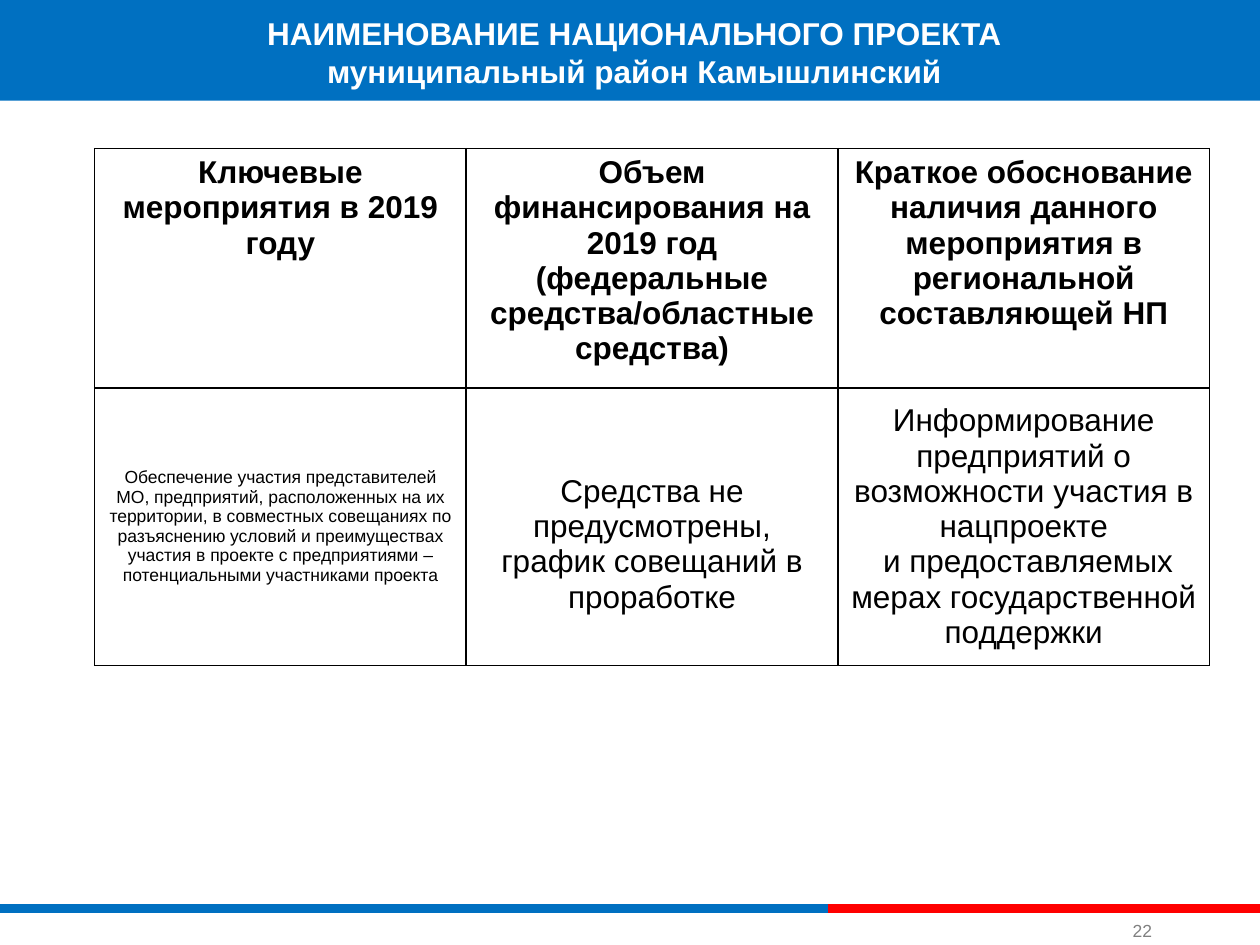
from lxml import etree
from pptx import Presentation
from pptx.dml.color import RGBColor
from pptx.enum.shapes import MSO_CONNECTOR, MSO_SHAPE
from pptx.enum.text import MSO_ANCHOR, PP_ALIGN
from pptx.oxml.ns import qn
from pptx.util import Inches, Pt

CENTER, LEFT = PP_ALIGN.CENTER, PP_ALIGN.LEFT
TOP, MIDDLE, BOTTOM = MSO_ANCHOR.TOP, MSO_ANCHOR.MIDDLE, MSO_ANCHOR.BOTTOM
RECTANGLE, STRAIGHT = MSO_SHAPE.RECTANGLE, MSO_CONNECTOR.STRAIGHT
TITLE_ONLY = 5

FONT = "Arial"
COLORS = {
    "blue": "0070C1",
    "red": "FF0000",
    "white": "FFFFFF",
    "black": "000000",
    "gray": "808080",
}

HEADINGS = [
    "Ключевые мероприятия в 2019 году",
    "Объем финансирования на 2019 год (федеральные средства/областные средства)",
    "Краткое обоснование наличия данного мероприятия в региональной составляющей НП",
]
# Text, size and top margin of each cell
MEASURES = [
    ("Обеспечение участия представителей МО, предприятий, расположенных на их "
     "территории, в совместных совещаниях по разъяснению условий и преимуществах "
     "участия в проекте с предприятиями – потенциальными участниками проекта", 10, 0.05),
    ("Средства не предусмотрены, график совещаний в проработке", 18, 0.33),
    ("Информирование предприятий о возможности участия в нацпроекте\n"
     " и предоставляемых мерах государственной поддержки", 18, 0.05),
]


class SlideBuilder:
    def __init__(self, slide):
        self.slide = slide

    def color(self, name):
        return RGBColor.from_string(COLORS[name])

    def format_text(self, frame, text, size, color, bold=False, align=CENTER):
        frame.text = text
        for paragraph in frame.paragraphs:
            paragraph.alignment = align
            paragraph.line_spacing = 1.0
            for run in paragraph.runs:
                run.font.name = FONT
                run.font.size = Pt(size)
                run.font.bold = bold
                run.font.color.rgb = self.color(color)

    def set_frame(self, frame, anchor):
        frame.word_wrap = False
        frame.vertical_anchor = anchor
        frame.margin_left = frame.margin_right = Inches(0.05)
        frame.margin_top = frame.margin_bottom = Inches(0.05)

    def banner(self, left, top, width, height):
        band = self.slide.shapes.add_shape(
            RECTANGLE, Inches(left), Inches(top), Inches(width), Inches(height))
        band.shadow.inherit = False
        band.fill.solid()
        band.fill.fore_color.rgb = self.color("blue")
        band.line.fill.background()
        # Send behind the title
        self.slide.shapes._spTree.insert(2, band._element)

    def title(self, text, left, top, width, height):
        title = self.slide.shapes.title
        title.left, title.top = Inches(left), Inches(top)
        title.width, title.height = Inches(width), Inches(height)
        self.set_frame(title.text_frame, MIDDLE)
        self.format_text(title.text_frame, text, 18, "white", bold=True)

    def line(self, start, end, y, color):
        rule = self.slide.shapes.add_connector(
            STRAIGHT, Inches(start), Inches(y), Inches(end), Inches(y))
        rule.line.color.rgb = self.color(color)
        rule.line.width = Pt(5)
        etree.SubElement(rule._element.spPr, qn("a:effectLst"))

    def label(self, text, left, top, width, height):
        box = self.slide.shapes.add_textbox(
            Inches(left), Inches(top), Inches(width), Inches(height))
        self.set_frame(box.text_frame, BOTTOM)
        # Wrapping holds the text at the left edge of the box
        box.text_frame.word_wrap = True
        self.format_text(box.text_frame, text, 10, "gray", align=LEFT)

    def table(self, left, top, column_width, row_heights):
        columns = len(HEADINGS)
        table = self.slide.shapes.add_table(
            len(row_heights), columns, Inches(left), Inches(top),
            Inches(column_width * columns), Inches(sum(row_heights))).table
        table.first_row = table.horz_banding = False
        for column in table.columns:
            column.width = Inches(column_width)
        for row, height in zip(table.rows, row_heights):
            row.height = Inches(height)
        for index, heading in enumerate(HEADINGS):
            self.cell(table.cell(0, index), heading, 18, TOP, bold=True)
        for index, (text, size, margin_top) in enumerate(MEASURES):
            self.cell(table.cell(1, index), text, size, MIDDLE, margin_top)

    def cell(self, cell, text, size, anchor, margin_top=0.05, bold=False):
        cell.vertical_anchor = anchor
        cell.margin_top = Inches(margin_top)
        self.format_text(cell.text_frame, text, size, "black", bold)
        properties = cell._tc.get_or_add_tcPr()
        for side in ("a:lnL", "a:lnR", "a:lnT", "a:lnB"):
            border = etree.SubElement(properties, qn(side), w=str(Pt(1)))
            fill = etree.SubElement(border, qn("a:solidFill"))
            etree.SubElement(fill, qn("a:srgbClr"), val=COLORS["black"])
        cell.fill.background()


def main():
    presentation = Presentation()
    presentation.slide_width, presentation.slide_height = Inches(10), Inches(7.5)
    layout = presentation.slide_layouts[TITLE_ONLY]
    builder = SlideBuilder(presentation.slides.add_slide(layout))

    # Header
    builder.banner(0, -0.03, 10, 0.83)
    builder.title("НАИМЕНОВАНИЕ НАЦИОНАЛЬНОГО ПРОЕКТА\n"
                  "муниципальный район Камышлинский", 1.99, 0.06, 6.09, 0.71)

    # Key measures
    builder.table(0.75, 1.18, 2.95, [1.9, 2.2])

    # Footer
    builder.line(0, 6.57, 7.21, "blue")
    builder.line(6.57, 10, 7.21, "red")
    builder.label("22", 8.94, 7.27, 0.4, 0.25)

    presentation.save("out.pptx")


if __name__ == "__main__":
    main()
